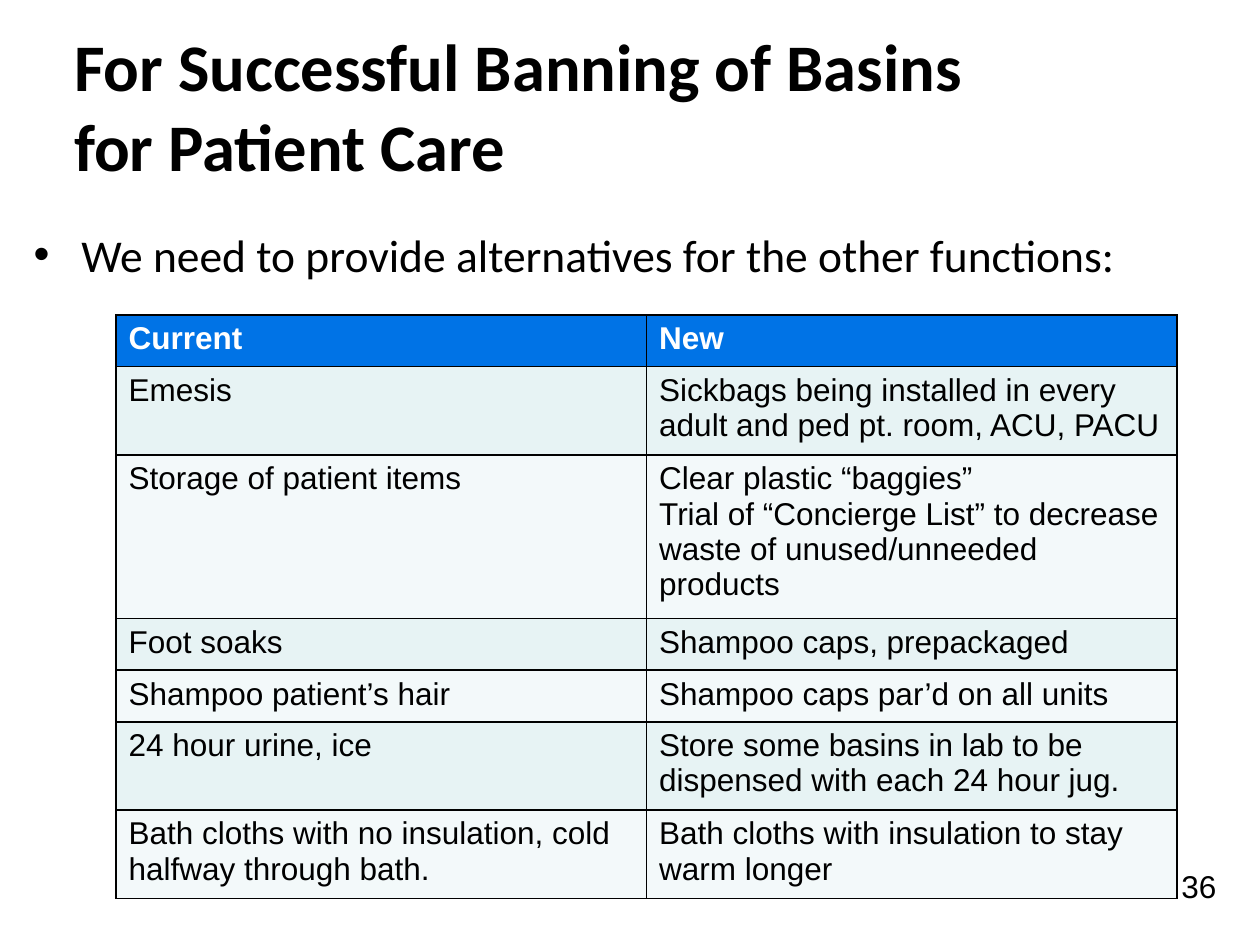
from dataclasses import dataclass
from typing import NamedTuple

from lxml import etree
from pptx import Presentation
from pptx.dml.color import RGBColor
from pptx.enum.text import MSO_ANCHOR, MSO_AUTO_SIZE, PP_ALIGN
from pptx.oxml.ns import qn
from pptx.util import Cm, Pt

LEFT, RIGHT = PP_ALIGN.LEFT, PP_ALIGN.RIGHT
TOP, MIDDLE = MSO_ANCHOR.TOP, MSO_ANCHOR.MIDDLE
NO_AUTOFIT = MSO_AUTO_SIZE.NONE
TITLE_ONLY = 5


class TextStyle(NamedTuple):
    name: str
    size: int
    color: str
    bold: bool = False


@dataclass(frozen=True)
class Theme:
    title: TextStyle = TextStyle("Calibri", 38, "000000", True)
    bullet: TextStyle = TextStyle("Calibri", 26, "000000")
    header: TextStyle = TextStyle("Arial", 18, "FFFFFF", True)
    body: TextStyle = TextStyle("Arial", 18, "000000")
    header_fill: str = "0073E6"
    band_fills: tuple[str, str] = ("E7F3F4", "F3F9FA")
    border: str = "000000"
    border_width: int = 1


class Box(NamedTuple):
    left: float
    top: float
    width: float
    height: float


class Replacement(NamedTuple):
    current: str
    new: str
    height: float


THEME = Theme()
TITLE_BOX = Box(1.24, 0.43, 24.16, 3.38)
BULLET_BOX = Box(0.43, 4.45, 24.13, 12.67)
TABLE_BOX = Box(2.34, 6.35, 21.39, 11.76)
NUMBER_BOX = Box(18.85, 17.35, 5.92, 1.32)
BULLET_INDENT = 0.96
ONE_LINE, TWO_LINES, FOUR_LINES = 1.04, 1.78, 3.3

REPLACEMENTS = [
    Replacement("Current", "New", ONE_LINE),
    Replacement("Emesis", "Sickbags being installed in every adult and ped pt. room, ACU, PACU", TWO_LINES),
    Replacement(
        "Storage of patient items",
        "Clear plastic “baggies”\nTrial of “Concierge List” to decrease waste of unused/unneeded products",
        FOUR_LINES,
    ),
    Replacement("Foot soaks", "Shampoo caps, prepackaged", ONE_LINE),
    Replacement("Shampoo patient’s hair", "Shampoo caps par’d on all units", ONE_LINE),
    Replacement("24 hour urine, ice", "Store some basins in lab to be dispensed with each 24 hour jug.", TWO_LINES),
    Replacement(
        "Bath cloths with no insulation, cold halfway through bath.",
        "Bath cloths with insulation to stay warm longer",
        TWO_LINES,
    ),
]


def set_values(target, values: dict) -> None:
    """Set each named attribute on the target."""
    for name, value in values.items():
        setattr(target, name, value)


def write_text(frame, text: str, style: TextStyle, align=LEFT) -> None:
    """Fill a text frame and format all of its paragraphs."""
    frame.text = text
    for paragraph in frame.paragraphs:
        paragraph.alignment = align
        for run in paragraph.runs:
            set_values(run.font, {"name": style.name, "size": Pt(style.size), "bold": style.bold})
            run.font.color.rgb = RGBColor.from_string(style.color)


def add_text(slide, box: Box, text: str, style: TextStyle, align=LEFT):
    """Add a wrapping text box and return its text frame."""
    frame = slide.shapes.add_textbox(*map(Cm, box)).text_frame
    set_values(frame, {"word_wrap": True, "auto_size": NO_AUTOFIT, "vertical_anchor": TOP})
    write_text(frame, text, style, align)
    return frame


def add_title(slide, text: str) -> None:
    """Place and format the title placeholder."""
    title = slide.shapes.title
    set_values(title, dict(zip(Box._fields, map(Cm, TITLE_BOX))))
    set_values(title.text_frame, {"word_wrap": True, "auto_size": NO_AUTOFIT, "vertical_anchor": MIDDLE})
    write_text(title.text_frame, text, THEME.title)


def add_bullet(paragraph) -> None:
    """Give a paragraph a hanging round bullet."""
    properties = paragraph._p.get_or_add_pPr()
    indent = Cm(BULLET_INDENT)
    properties.set("marL", str(indent))
    properties.set("indent", str(-indent))
    etree.SubElement(properties, qn("a:buFont"), typeface="Arial")
    etree.SubElement(properties, qn("a:buChar"), char="•")


def add_borders(cell) -> None:
    """Draw a solid line on all four sides of a cell."""
    properties = cell._tc.get_or_add_tcPr()
    for index, side in enumerate(("lnL", "lnR", "lnT", "lnB")):
        line = etree.Element(qn(f"a:{side}"), w=str(Pt(THEME.border_width)))
        fill = etree.SubElement(line, qn("a:solidFill"))
        etree.SubElement(fill, qn("a:srgbClr"), val=THEME.border)
        properties.insert(index, line)


def format_cell(cell, text: str, style: TextStyle, fill: str) -> None:
    """Write, fill and outline one table cell."""
    write_text(cell.text_frame, text, style)
    cell.fill.solid()
    cell.fill.fore_color.rgb = RGBColor.from_string(fill)
    add_borders(cell)


def add_replacements(slide, replacements: list[Replacement]) -> None:
    """Add the table of current uses and their replacements."""
    table = slide.shapes.add_table(len(replacements), 2, *map(Cm, TABLE_BOX)).table
    for row, replacement in enumerate(replacements):
        table.rows[row].height = Cm(replacement.height)
        style = THEME.body if row else THEME.header
        fill = THEME.band_fills[(row - 1) % 2] if row else THEME.header_fill
        for column, text in enumerate((replacement.current, replacement.new)):
            format_cell(table.cell(row, column), text, style, fill)


def main() -> None:
    """Build the slide and save it."""
    deck = Presentation()
    set_values(deck, {"slide_width": Cm(25.4), "slide_height": Cm(19.05)})
    slide = deck.slides.add_slide(deck.slide_layouts[TITLE_ONLY])
    add_title(slide, "For Successful Banning of Basins \vfor Patient Care")
    need = add_text(
        slide, BULLET_BOX, "We need to provide alternatives for the other functions:", THEME.bullet
    )
    add_bullet(need.paragraphs[0])
    add_replacements(slide, REPLACEMENTS)
    add_text(slide, NUMBER_BOX, "36", THEME.body, RIGHT)
    deck.save("out.pptx")


if __name__ == "__main__":
    main()
